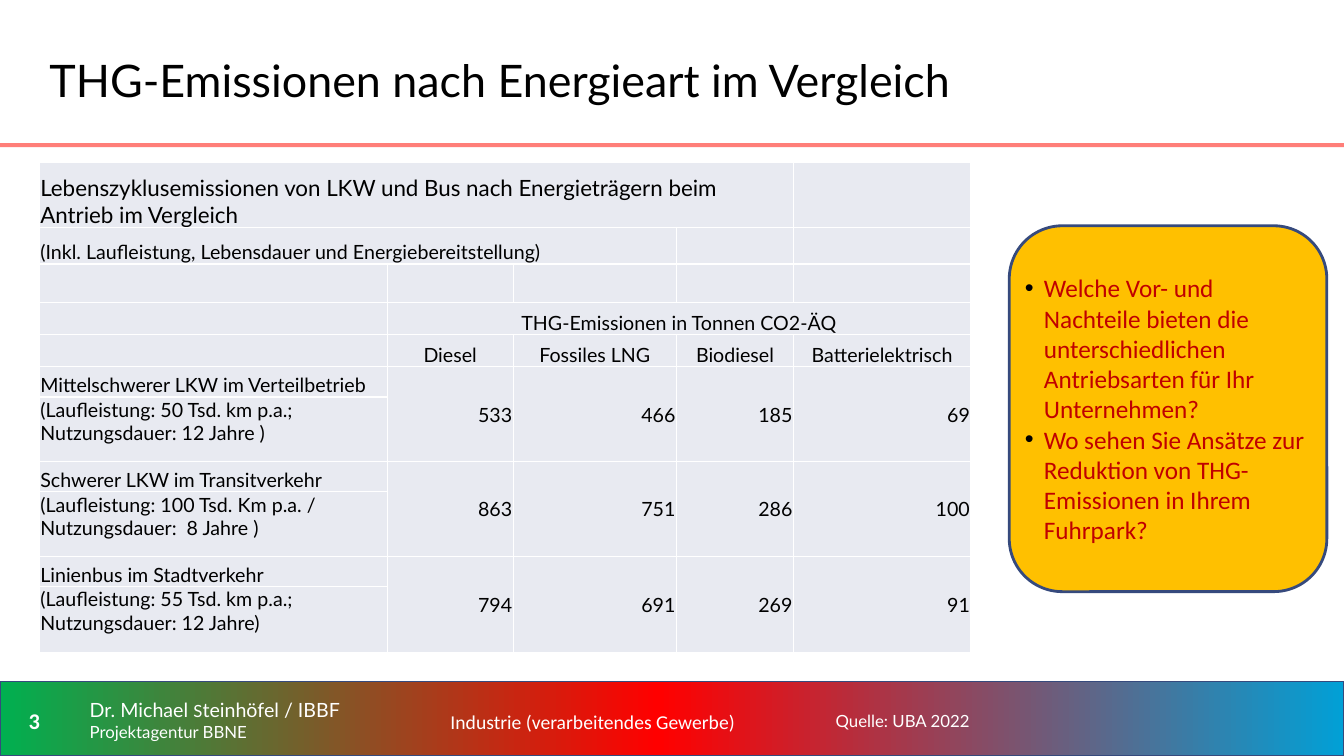
import copy

import pptx
import pptx.util
import pptx.dml.color
import pptx.enum.shapes
import pptx.enum.text
import pptx.oxml
import pptx.oxml.ns

Inches, Pt = pptx.util.Inches, pptx.util.Pt
ALIGN, ANCHOR = pptx.enum.text.PP_ALIGN, pptx.enum.text.MSO_ANCHOR
SHAPE = pptx.enum.shapes.MSO_SHAPE
qn = pptx.oxml.ns.qn

# Content
TITLE = "THG-Emissionen nach Energieart im Vergleich"
HEADING = "Lebenszyklusemissionen von LKW und Bus nach Energieträgern beim Antrieb im Vergleich"
SUBHEADING = "(Inkl. Laufleistung, Lebensdauer und Energiebereitstellung)"
UNIT = "THG-Emissionen in Tonnen CO2-ÄQ"
ENERGIES = ["Diesel", "Fossiles LNG", "Biodiesel", "Batterielektrisch"]
VEHICLES = [
    ("Mittelschwerer LKW im Verteilbetrieb",
     "(Laufleistung: 50 Tsd. km p.a.; Nutzungsdauer: 12 Jahre )", [533, 466, 185, 69]),
    ("Schwerer LKW im Transitverkehr",
     "(Laufleistung: 100 Tsd. Km p.a. / Nutzungsdauer:  8 Jahre )", [863, 751, 286, 100]),
    ("Linienbus im Stadtverkehr",
     "(Laufleistung: 55 Tsd. km p.a.; Nutzungsdauer: 12 Jahre)", [794, 691, 269, 91]),
]
QUESTIONS = [
    "Welche Vor- und Nachteile bieten die unterschiedlichen Antriebsarten für Ihr Unternehmen?",
    "Wo sehen Sie Ansätze zur Reduktion von THG-Emissionen in Ihrem Fuhrpark?",
]
AUTHOR = [("Dr. Michael ", 14), ("S", 12), ("teinhöfel / IBBF", 14)]
AGENCY = "Projektagentur BBNE"
# text, left, width, font, size, bold, alignment, left margin, line spacing
FOOTERS = [
    ("3", 0, 0.68, "Calibri", 16, True, ALIGN.CENTER, 0, 1),
    ("Industrie (verarbeitendes Gewerbe)", 3.66, 4.19, "Calibri", 14, False, ALIGN.CENTER, 0.25, 1.1),
    ("Quelle: UBA 2022", 7.94, 5.05, "Lato", 12, False, ALIGN.LEFT, 0.25, 1.1),
]
COLUMNS = [3.45, 1.25, 1.62, 1.16, 1.76]
ROWS = [0.65, 0.36, 0.38, 0.32, 0.32, 0.3, 0.64, 0.3, 0.64, 0.3, 0.66]
FOOTER_TOP, FOOTER_HEIGHT = 6.84, 0.61
COLORS = {
    "text": "000000", "white": "FFFFFF", "rule": "FF7E79", "outline": "364A7D",
    "cell": "E8EAF1", "callout": "FFC000", "question": "C00000",
}
BAR_STOPS = [(0, "00B050"), (0.49, "FF0000"), (1, "01A0D6")]


def rgb(value):
    return pptx.dml.color.RGBColor.from_string(value)


def set_font(font, name, size, color, bold=False):
    font.name, font.size, font.bold = name, Pt(size), bold
    font.color.rgb = rgb(COLORS[color])


def add_box(kind, left, top, width, height, fill=None, outline=None):
    box = page.shapes.add_shape(kind, Inches(left), Inches(top), Inches(width), Inches(height))
    box.shadow.inherit = False
    if fill:
        box.fill.solid()
        box.fill.fore_color.rgb = rgb(COLORS[fill])
    if outline:
        box.line.color.rgb = rgb(COLORS["outline"])
        box.line.width = Pt(outline)
    else:
        box.line.fill.background()
    return box


def add_footer_frame(left, width):
    box = page.shapes.add_textbox(Inches(left), Inches(FOOTER_TOP), Inches(width), Inches(FOOTER_HEIGHT))
    box.text_frame.word_wrap = True
    box.text_frame.vertical_anchor = ANCHOR.MIDDLE
    return box.text_frame


def fill_cell(row, column, text, size=14, align=ALIGN.LEFT, anchor=ANCHOR.BOTTOM):
    cell = table.cell(row, column)
    cell.vertical_anchor = anchor
    para = cell.text_frame.paragraphs[0]
    para.text, para.alignment = text, align
    set_font(para.font, "Lato", size, "text")


deck = pptx.Presentation()
deck.slide_width, deck.slide_height = Inches(13.33), Inches(7.5)
page = deck.slides.add_slide(deck.slide_layouts[5])

# Footer bar with a three-colour gradient, and the rule under the title
bar = add_box(SHAPE.RECTANGLE, 0, 6.76, 13.33, 0.74, outline=1)
bar.fill.gradient()
bar.fill.gradient_angle = 0
stop_list = bar.element.spPr.find(".//" + qn("a:gsLst"))
stop_list.append(copy.deepcopy(stop_list[0]))
for stop, (position, color) in zip(bar.fill.gradient_stops, BAR_STOPS):
    stop.position = position
    stop.color.rgb = rgb(color)
add_box(SHAPE.RECTANGLE, 0, 1.42, 13.33, 0.04, "rule")

# Title
title = page.shapes.title
title.left, title.top, title.width, title.height = map(Inches, (0.39, 0.2, 9.84, 1.18))
title.text_frame.text = TITLE
title.text_frame.vertical_anchor = ANCHOR.MIDDLE
para = title.text_frame.paragraphs[0]
para.alignment = ALIGN.LEFT
set_font(para.font, "Lato", 32, "text")

# Table grid: sizes, cell fills and white borders
table = page.shapes.add_table(
    len(ROWS), len(COLUMNS), Inches(0.39), Inches(1.61),
    Inches(sum(COLUMNS)), Inches(sum(ROWS))).table
table.first_row = table.horz_banding = False
for column, width in zip(table.columns, COLUMNS):
    column.width = Inches(width)
for row, height in zip(table.rows, ROWS):
    row.height = Inches(height)
for cell in table.iter_cells():
    cell.margin_left = cell.margin_right = cell.margin_top = Inches(0.01)
    cell.margin_bottom = 0
    cell.fill.solid()
    cell.fill.fore_color.rgb = rgb(COLORS["cell"])
    for index, side in enumerate(("lnL", "lnR", "lnT", "lnB")):
        border = pptx.oxml.parse_xml(
            f'<a:{side} {pptx.oxml.ns.nsdecls("a")} w="12700"><a:solidFill>'
            f'<a:srgbClr val="{COLORS["white"]}"/></a:solidFill></a:{side}>')
        cell._tc.get_or_add_tcPr().insert(index, border)

# Table headings
for row, first, last in ((0, 0, 3), (1, 0, 2), (3, 1, 4)):
    table.cell(row, first).merge(table.cell(row, last))
fill_cell(0, 0, HEADING, 16)
fill_cell(1, 0, SUBHEADING)
fill_cell(3, 1, UNIT, align=ALIGN.CENTER)
for column, energy in enumerate(ENERGIES, 1):
    fill_cell(4, column, energy, align=ALIGN.CENTER)

# Two rows per vehicle, with the values merged across both
for index, (vehicle, usage, values) in enumerate(VEHICLES):
    row = 5 + 2 * index
    fill_cell(row, 0, vehicle)
    fill_cell(row + 1, 0, usage, anchor=ANCHOR.TOP)
    for column, value in enumerate(values, 1):
        table.cell(row, column).merge(table.cell(row + 1, column))
        fill_cell(row, column, str(value), align=ALIGN.RIGHT, anchor=ANCHOR.MIDDLE)

# Callout with the questions
callout = add_box(SHAPE.ROUNDED_RECTANGLE, 10.01, 2.24, 3.15, 3.63, "callout", 2)
callout.adjustments[0] = 0.167
frame = callout.text_frame
frame.word_wrap = True
frame.vertical_anchor = ANCHOR.MIDDLE
frame.margin_left = frame.margin_right = frame.margin_top = frame.margin_bottom = 0
frame.text = "\n".join(QUESTIONS)
for para in frame.paragraphs:
    para.alignment = ALIGN.LEFT
    props = para._p.get_or_add_pPr()
    props.set("marL", str(Inches(0.19)))
    props.set("indent", str(-Inches(0.19)))
    color = pptx.oxml.parse_xml(
        f'<a:buClr {pptx.oxml.ns.nsdecls("a")}><a:srgbClr val="{COLORS["text"]}"/></a:buClr>')
    font = pptx.oxml.parse_xml(f'<a:buFont {pptx.oxml.ns.nsdecls("a")} typeface="Arial"/>')
    bullet = pptx.oxml.parse_xml(f'<a:buChar {pptx.oxml.ns.nsdecls("a")} char="•"/>')
    props.extend([color, font, bullet])
    set_font(para.font, "Calibri", 18, "question")

# Footer texts
for text, left, width, name, size, bold, align, margin, spacing in FOOTERS:
    para = add_footer_frame(left, width).paragraphs[0]
    para.text, para.alignment, para.line_spacing = text, align, spacing
    para._p.get_or_add_pPr().set("marL", str(Inches(margin)))
    set_font(para.font, name, size, "white", bold)

frame = add_footer_frame(0.79, 2.78)
for text, size in AUTHOR:
    span = frame.paragraphs[0].add_run()
    span.text = text
    set_font(span.font, "Lato", size, "white")
para = frame.add_paragraph()
para.text = AGENCY
set_font(para.font, "Lato", 12, "white")

deck.save("out.pptx")
